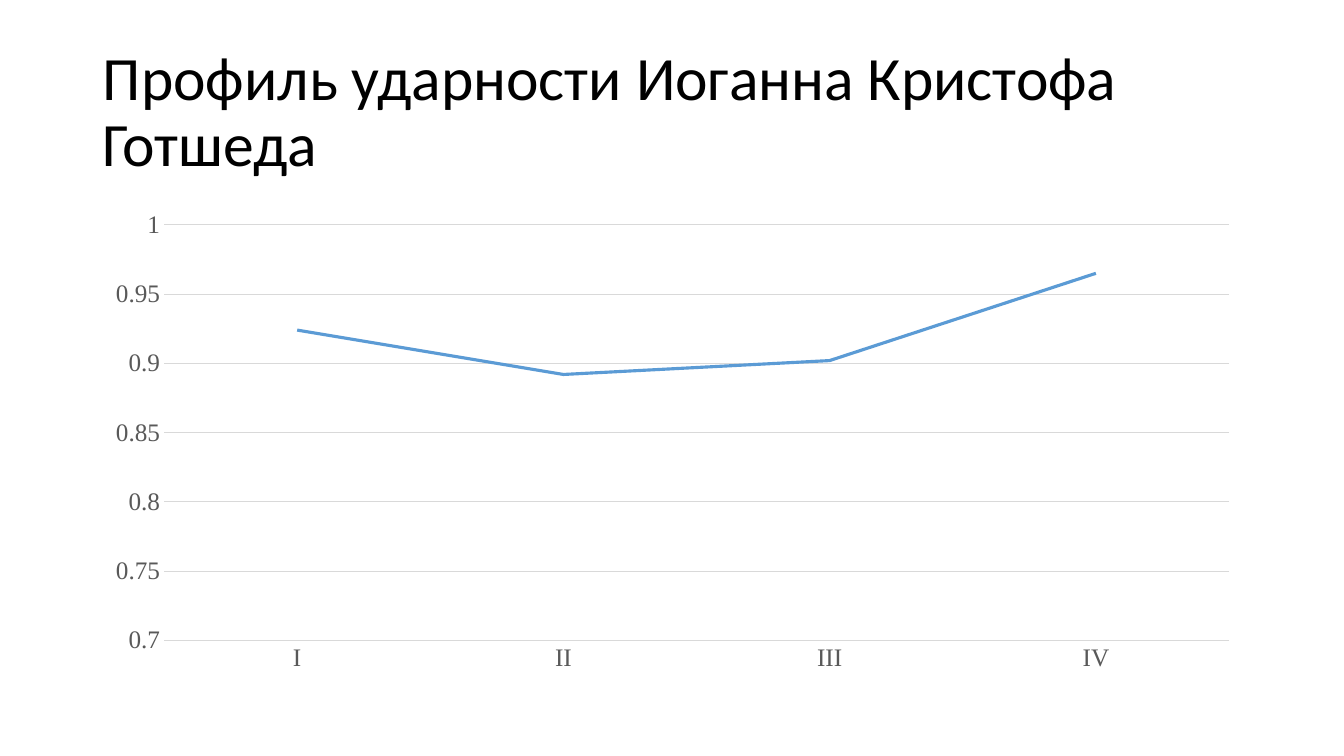
import pptx
import pptx.util
import pptx.chart.data
import pptx.dml.color
import pptx.enum.chart
import pptx.enum.text

Pt = pptx.util.Pt
Inches = pptx.util.Inches


def paint(color, code):
    color.rgb = pptx.dml.color.RGBColor.from_string(code)


deck = pptx.Presentation()
deck.slide_width, deck.slide_height = Inches(13.33), Inches(7.5)
slide = deck.slides.add_slide(deck.slide_layouts[5])

# Shared column for title and chart
left, width = Inches(0.92), Inches(11.5)

# Title
title = slide.shapes.title
title.left, title.top = left, Inches(0.4)
title.width, title.height = width, Inches(1.45)
frame = title.text_frame
frame.text = "Профиль ударности Иоганна Кристофа Готшеда"
frame.word_wrap = True
frame.auto_size = pptx.enum.text.MSO_AUTO_SIZE.NONE
frame.vertical_anchor = pptx.enum.text.MSO_ANCHOR.MIDDLE
line = frame.paragraphs[0]
line.alignment = pptx.enum.text.PP_ALIGN.LEFT
line.line_spacing = 0.9
font = line.runs[0].font
font.name, font.size = "Calibri", Pt(44)
paint(font.color, "000000")

# Stress profile chart
data = pptx.chart.data.CategoryChartData(number_format="General")
data.categories = ["I", "II", "III", "IV"]
data.add_series("Series 1", [0.924, 0.892, 0.902, 0.965])
chart = slide.shapes.add_chart(
    pptx.enum.chart.XL_CHART_TYPE.LINE, left, Inches(2), width, Inches(4.76), data
).chart
chart.has_legend = False
chart.has_title = False
chart.font.name, chart.font.size = "Times New Roman", Pt(11)
paint(chart.font.color, "000000")

# Data line
plot = chart.plots[0]
plot.vary_by_categories = False
curve = plot.series[0]
curve.smooth = False
curve.marker.style = pptx.enum.chart.XL_MARKER_STYLE.NONE
curve.format.line.width = Pt(2.25)
paint(curve.format.line.color, "5B9BD5")

# Axes
cats, vals = chart.category_axis, chart.value_axis
for axis in (cats, vals):
    axis.major_tick_mark = pptx.enum.chart.XL_TICK_MARK.NONE
    axis.minor_tick_mark = pptx.enum.chart.XL_TICK_MARK.NONE
    font = axis.tick_labels.font
    font.name, font.size = "Times New Roman", Pt(18)
    paint(font.color, "595959")
vals.minimum_scale, vals.maximum_scale, vals.major_unit = 0.7, 1, 0.05
vals.has_major_gridlines = True
vals.format.line.fill.background()
for rule in (cats.format.line, vals.major_gridlines.format.line):
    rule.width = Pt(0.75)
    paint(rule.color, "D9D9D9")

deck.save("out.pptx")
